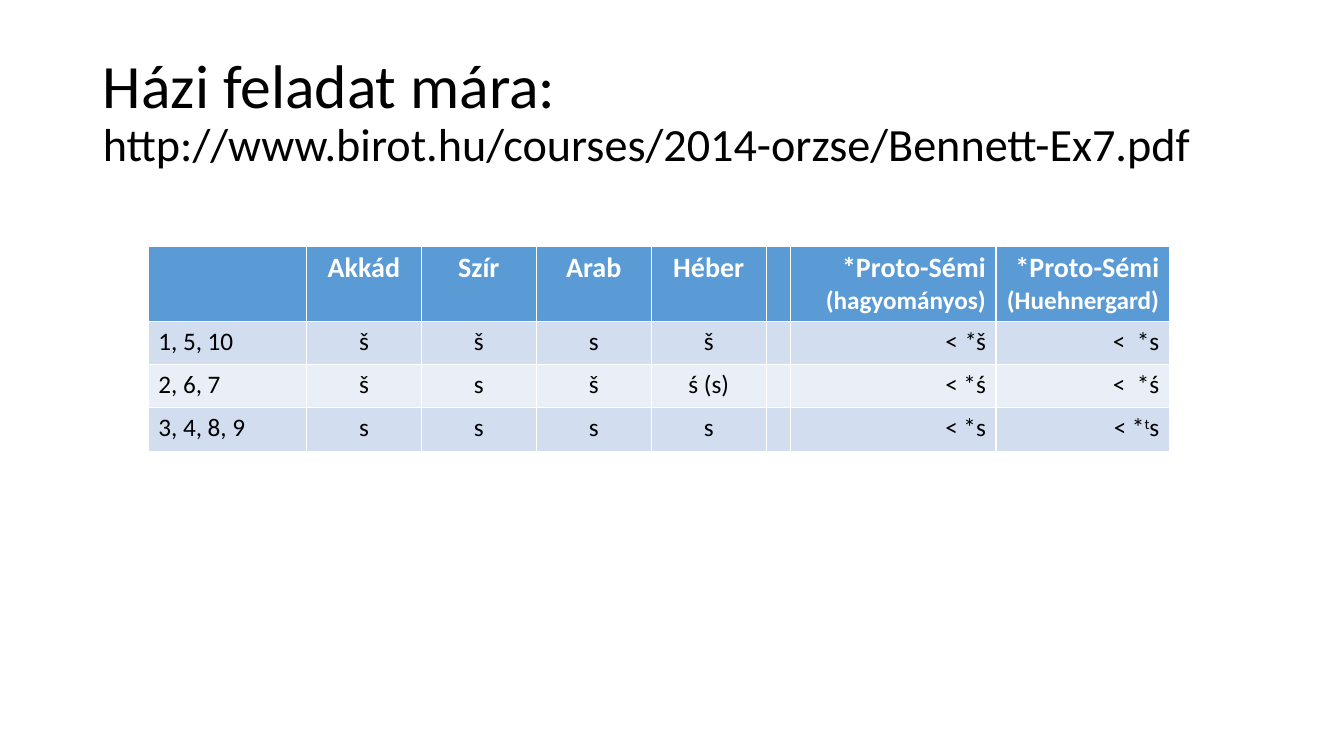
from pptx import Presentation
from pptx.dml.color import RGBColor
from pptx.enum import text
from pptx.util import Inches, Pt

FONT = "Calibri"
BLACK = RGBColor(0x00, 0x00, 0x00)
WHITE = RGBColor(0xFF, 0xFF, 0xFF)
HEADER_BLUE = RGBColor(0x5B, 0x9B, 0xD5)
BANDS = [RGBColor(0xD2, 0xDE, 0xEF), RGBColor(0xEA, 0xEF, 0xF7)]

LEFT, CENTER, RIGHT = text.PP_ALIGN.LEFT, text.PP_ALIGN.CENTER, text.PP_ALIGN.RIGHT
ALIGNMENTS = [LEFT] + [CENTER] * 5 + [RIGHT] * 2
COLUMN_WIDTHS = [1.57] + [1.14] * 4 + [0.23, 2.04, 1.72]
HEADER_HEIGHT, ROW_HEIGHT = 0.73, 0.43

HEADINGS = ["", "Akkád", "Szír", "Arab", "Héber", "",
            "*Proto-Sémi\n(hagyományos)", "*Proto-Sémi\n(Huehnergard)"]
# A cell with mixed formatting is a list of (text, style) pairs.
CORRESPONDENCES = [
    ["1, 5, 10", "š", "š", "s", "š", "",
     [("< ", ""), ("*", "italic"), ("š", "")], "<  *s"],
    ["2, 6, 7", "š", "s", "š", "ś (s)", "", "< *ś", "<  *ś"],
    ["3, 4, 8, 9", "s", "s", "s", "s", "", "< *s",
     [("< *", ""), ("t", "superscript"), ("s", "")]],
]


def format_font(font, size, color, bold=False):
    font.name = FONT
    font.size = Pt(size)
    font.color.rgb = color
    font.bold = bold


def add_title(slide):
    title = slide.shapes.title
    title.left, title.top = Inches(0.92), Inches(0.4)
    title.width, title.height = Inches(11.5), Inches(1.45)
    frame = title.text_frame
    frame.word_wrap = True
    frame.auto_size = text.MSO_AUTO_SIZE.NONE
    frame.vertical_anchor = text.MSO_ANCHOR.MIDDLE
    heading = frame.paragraphs[0]
    heading.alignment = LEFT
    heading.line_spacing = 0.9
    task = heading.add_run()
    task.text = "Házi feladat mára: "
    format_font(task.font, 44, BLACK)
    heading.add_line_break()
    address = heading.add_run()
    address.text = "http://www.birot.hu/courses/2014-orzse/Bennett-Ex7.pdf"
    format_font(address.font, 33, BLACK)


def fill_cell(cell, fill):
    cell.fill.solid()
    cell.fill.fore_color.rgb = fill


def write_heading(cell, heading, alignment):
    fill_cell(cell, HEADER_BLUE)
    cell.text = heading
    for line, size in zip(cell.text_frame.paragraphs, (20, 18)):
        line.alignment = alignment
        format_font(line.font, size, WHITE, bold=True)


def write_sound(cell, sound, alignment, fill):
    fill_cell(cell, fill)
    line = cell.text_frame.paragraphs[0]
    line.alignment = alignment
    format_font(line.font, 18, BLACK)
    for part, style in [(sound, "")] if isinstance(sound, str) else sound:
        run = line.add_run()
        run.text = part
        if style == "italic":
            run.font.italic = True
        elif style == "superscript":
            run.font._element.set("baseline", "30000")


def add_sound_table(slide):
    """Add the table; its default style draws the white cell borders."""
    row_count = len(CORRESPONDENCES)
    table = slide.shapes.add_table(
        row_count + 1, len(COLUMN_WIDTHS), Inches(1.47), Inches(2.44),
        Inches(sum(COLUMN_WIDTHS)),
        Inches(HEADER_HEIGHT + row_count * ROW_HEIGHT)).table
    for column, width in zip(table.columns, COLUMN_WIDTHS):
        column.width = Inches(width)
    header, *body = table.rows
    header.height = Inches(HEADER_HEIGHT)
    for cell, heading, alignment in zip(header.cells, HEADINGS, ALIGNMENTS):
        # The heading and its sub-line share the column's alignment.
        write_heading(cell, heading, alignment)
    for index, (row, sounds) in enumerate(zip(body, CORRESPONDENCES)):
        row.height = Inches(ROW_HEIGHT)
        for cell, sound, alignment in zip(row.cells, sounds, ALIGNMENTS):
            write_sound(cell, sound, alignment, BANDS[index % 2])


def main():
    presentation = Presentation()
    presentation.slide_width = Inches(13.33)
    presentation.slide_height = Inches(7.5)
    slide = presentation.slides.add_slide(presentation.slide_layouts[5])
    add_title(slide)
    add_sound_table(slide)
    presentation.save("out.pptx")


if __name__ == "__main__":
    main()
